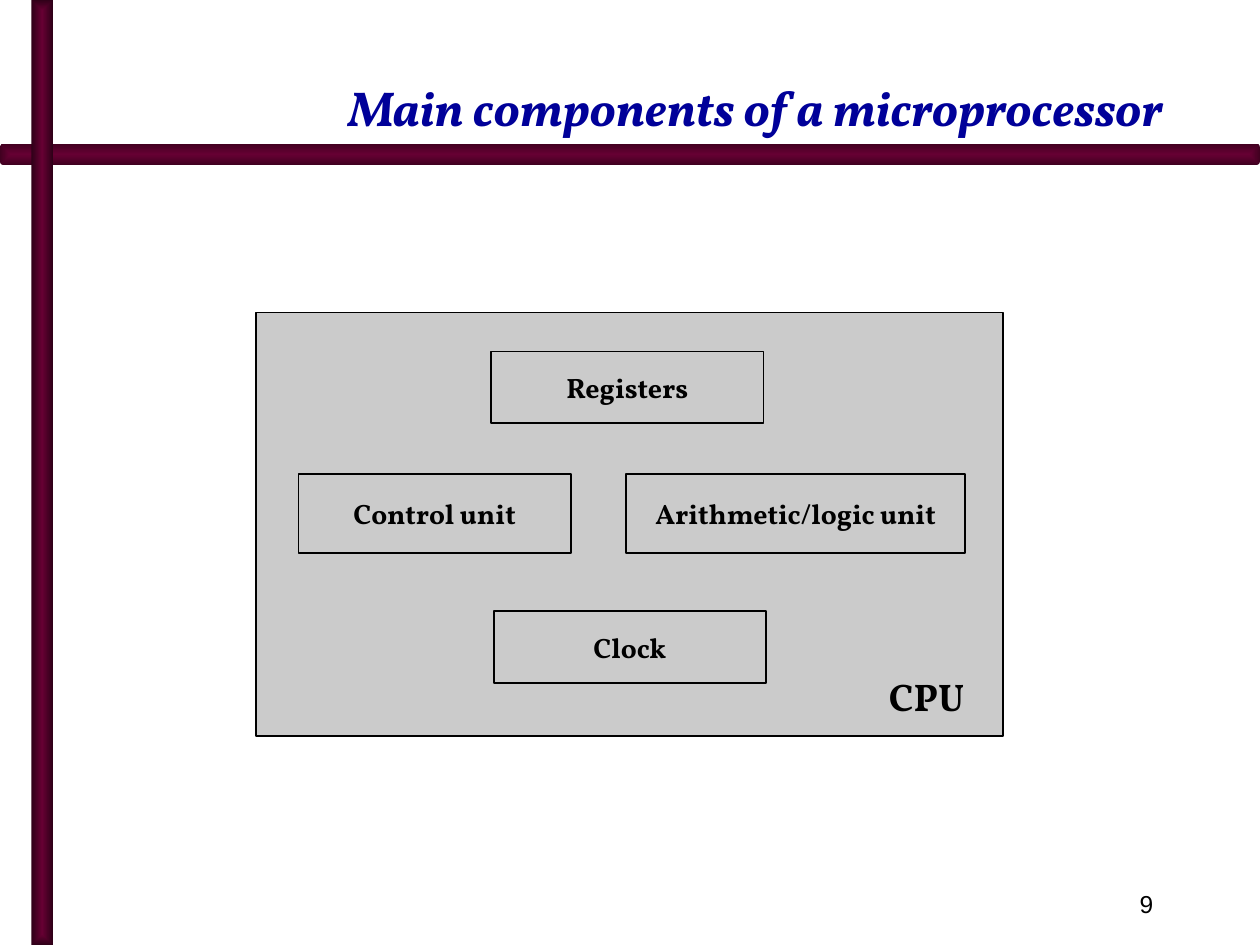
from pptx import Presentation
from pptx.dml.color import RGBColor
from pptx.enum.shapes import MSO_SHAPE
from pptx.enum.text import MSO_ANCHOR, PP_ALIGN
from pptx.oxml import parse_xml
from pptx.oxml.ns import nsdecls, qn
from pptx.util import Inches, Pt

RECT, ROUND = MSO_SHAPE.RECTANGLE, MSO_SHAPE.ROUNDED_RECTANGLE
MIDDLE, BOTTOM, TOP = MSO_ANCHOR.MIDDLE, MSO_ANCHOR.BOTTOM, MSO_ANCHOR.TOP
LEFT, CENTER, RIGHT = PP_ALIGN.LEFT, PP_ALIGN.CENTER, PP_ALIGN.RIGHT

COLORS = {"plum": "660033", "wine": "410020", "dark": "2F0018",
          "blue": "000099", "gray": "CBCBCB", "black": "000000"}
TITLE = "Main components of a microprocessor"
BARS = [
    (ROUND, (0, 1.14, 10, 0.17), "wine"),
    (RECT, (0.25, 0, 0.17, 7.5), "dark"),
]
CPU = (2.03, 2.48, 5.93, 3.36)
UNITS = [
    ("Clock", (3.92, 4.85, 2.16, 0.57)),
    ("Control unit", (2.37, 3.76, 2.16, 0.63)),
    ("Arithmetic/logic unit", (4.97, 3.76, 2.69, 0.63)),
    ("Registers", (3.9, 2.79, 2.16, 0.57)),
]
CENTERED = ('<a:path %s path="shape"><a:fillToRect l="50000" t="50000" '
            'r="50000" b="50000"/></a:path>' % nsdecls("a"))


def color(name):
    return RGBColor.from_string(COLORS[name])


def inches(box):
    return [Inches(n) for n in box]


def write(shape, text, size=16, font="Vollkorn", ink="black", bold=True,
          italic=False, align=CENTER, anchor=MIDDLE, wrap=True):
    frame = shape.text_frame
    frame.word_wrap = wrap
    frame.vertical_anchor = anchor
    para = frame.paragraphs[0]
    para.alignment = align
    run = para.add_run()
    run.text = text
    run.font.size = Pt(size)
    run.font.name = font
    run.font.bold = bold
    run.font.italic = italic
    run.font.color.rgb = color(ink)


def add_bar(shapes, kind, box, edge):
    bar = shapes.add_shape(kind, *inches(box))
    bar.shadow.inherit = False
    bar.line.fill.background()
    bar.fill.gradient()
    for stop, name in zip(bar.fill.gradient_stops, ("plum", edge)):
        stop.color.rgb = color(name)
    grad = bar._element.spPr.find(qn("a:gradFill"))
    grad.replace(grad.find(qn("a:lin")), parse_xml(CENTERED))


def add_box(shapes, box):
    shape = shapes.add_shape(RECT, *inches(box))
    shape.shadow.inherit = False
    shape.fill.solid()
    shape.fill.fore_color.rgb = color("gray")
    shape.line.color.rgb = color("black")
    shape.line.width = Pt(1)
    return shape


def main():
    deck = Presentation()
    deck.slide_width, deck.slide_height = Inches(10), Inches(7.5)
    slide = deck.slides.add_slide(deck.slide_layouts[5])
    shapes = slide.shapes

    for kind, box, edge in BARS:
        add_bar(shapes, kind, box, edge)

    title = shapes.title
    title.left, title.top, title.width, title.height = inches((0.83, 0.17, 8.5, 0.96))
    write(title, TITLE, size=28, ink="blue", italic=True, align=RIGHT, anchor=BOTTOM)

    group = shapes.add_group_shape().shapes
    add_box(group, CPU)
    for text, box in UNITS:
        write(add_box(group, box), text, wrap=False)
    label = group.add_textbox(*inches((6.88, 5.29, 0.95, 0.47)))
    write(label, "CPU", size=22, anchor=TOP)

    page = shapes.add_textbox(*inches((7.17, 6.92, 2.08, 0.5)))
    write(page, "9", size=14, font="Arial", bold=False, align=RIGHT)

    deck.save("out.pptx")


if __name__ == "__main__":
    main()
